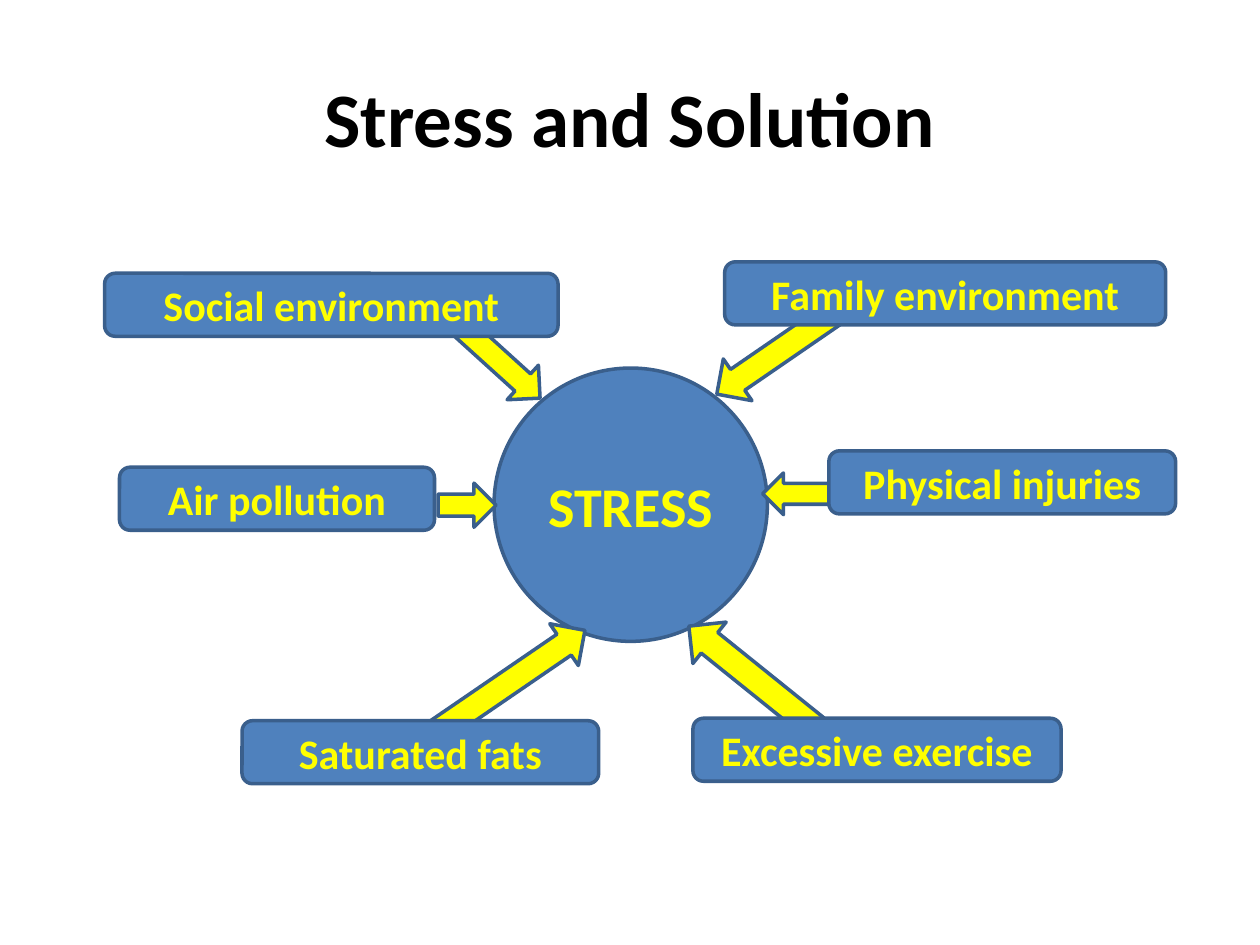
"""Builds a slide showing six causes pointing at stress."""
from collections import namedtuple
from pptx import Presentation
from pptx.dml.color import RGBColor
from pptx.enum.shapes import MSO_SHAPE
from pptx.enum.text import MSO_ANCHOR, PP_ALIGN
from pptx.util import Cm, Pt

Theme = namedtuple("Theme", "font blue outline yellow black title center label line")
theme = Theme(
    font="Calibri",
    blue=RGBColor(0x4F, 0x81, 0xBD),
    outline=RGBColor(0x3A, 0x5F, 0x8C),
    yellow=RGBColor(0xFF, 0xFF, 0x00),
    black=RGBColor(0x00, 0x00, 0x00),
    title=Pt(44),
    center=Pt(32),
    label=Pt(24),
    line=Pt(2),
)


def add_figure(kind, box, fill):
    figure = slide.shapes.add_shape(kind, *map(Cm, box))
    figure.shadow.inherit = False
    figure.fill.solid()
    figure.fill.fore_color.rgb = fill
    figure.line.color.rgb = theme.outline
    figure.line.width = theme.line
    return figure


def write(figure, text, size, color):
    frame = figure.text_frame
    frame.text = text
    frame.word_wrap = True
    frame.vertical_anchor = MSO_ANCHOR.MIDDLE
    paragraph = frame.paragraphs[0]
    paragraph.alignment = PP_ALIGN.CENTER
    font = paragraph.runs[0].font
    font.name, font.size, font.bold = theme.font, size, True
    font.color.rgb = color


presentation = Presentation()
presentation.slide_width = Cm(25.4)
presentation.slide_height = Cm(19.05)
slide = presentation.slides.add_slide(presentation.slide_layouts[6])

title = slide.shapes.add_textbox(Cm(1.27), Cm(0.76), Cm(22.86), Cm(3.18))
write(title, "Stress and Solution", theme.title, theme.black)

stress = add_figure(MSO_SHAPE.OVAL, (9.96, 7.42, 5.51, 5.51), theme.blue)
write(stress, "STRESS", theme.center, theme.yellow)

cause_height = 1.27
causes = [
    ("Air pollution", (2.41, 9.42, 6.35), (8.97, 9.6, 0.89, 1.17), 90),
    ("Saturated fats", (4.88, 14.53, 7.19), (9.73, 11.89, 1.02, 3.76), 55.6),
    ("Social environment", (2.11, 5.51, 9.14), (9.55, 6.07, 0.94, 2.34), 132.2),
    ("Family environment", (14.61, 5.28, 8.89), (15.11, 5.72, 1.02, 2.84), 235.5),
    ("Physical injuries", (16.71, 9.09, 6.99), (15.82, 9.09, 0.84, 1.73), 270),
    ("Excessive exercise", (13.97, 14.48, 7.42), (14.63, 12.01, 1.07, 3.28), 308.8),
]
for name, place, arrow_box, angle in causes:
    arrow = add_figure(MSO_SHAPE.UP_ARROW, arrow_box, theme.yellow)
    arrow.rotation = angle
    cause = add_figure(MSO_SHAPE.ROUNDED_RECTANGLE, (*place, cause_height), theme.blue)
    write(cause, name, theme.label, theme.yellow)

presentation.save("out.pptx")
